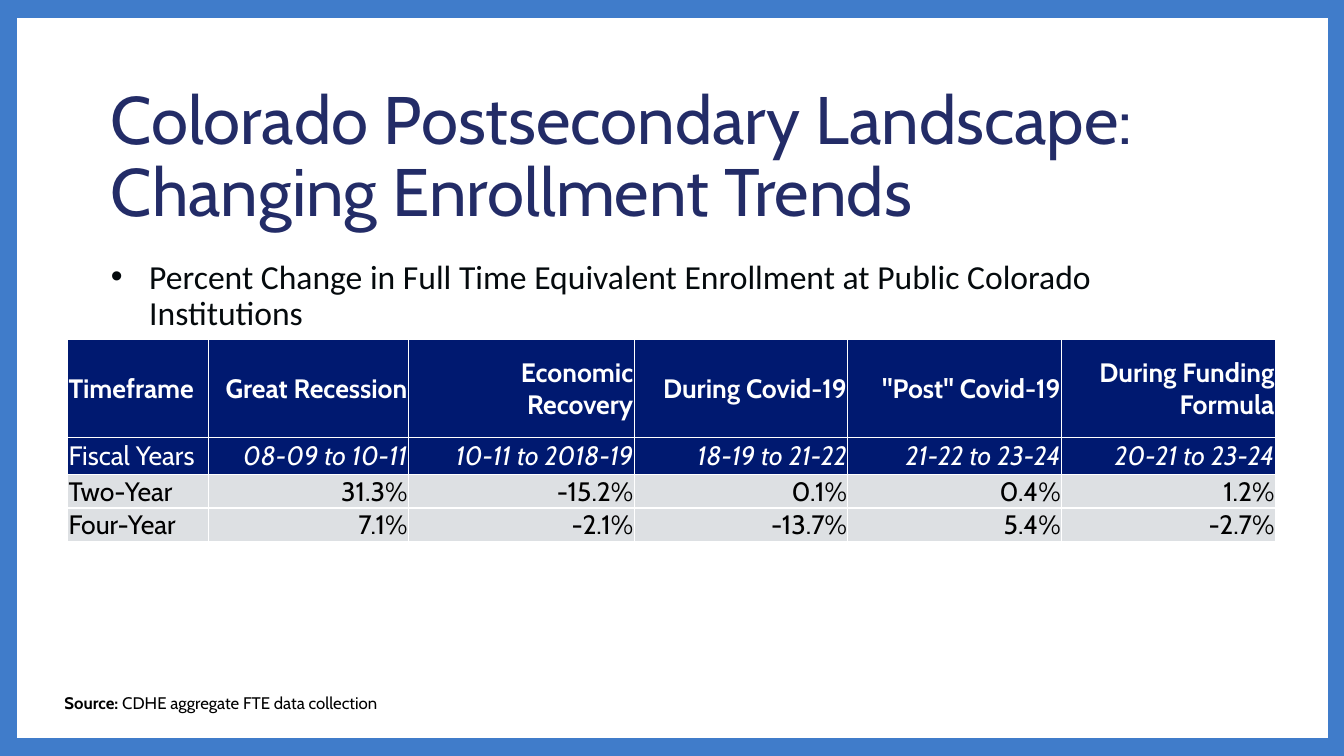
from lxml.etree import SubElement
from pptx import Presentation
from pptx.dml.color import RGBColor
from pptx.enum.shapes import MSO_SHAPE
from pptx.enum.text import MSO_ANCHOR, MSO_AUTO_SIZE, PP_ALIGN
from pptx.oxml.ns import qn
from pptx.util import Inches, Pt

# Content
TITLE = "Colorado Postsecondary Landscape: Changing Enrollment Trends"
BULLET = "Percent Change in Full Time Equivalent Enrollment at Public Colorado Institutions"
ENROLLMENT = [
    ("Timeframe", "Great Recession", "Economic Recovery", "During Covid-19",
     '"Post" Covid-19', "During Funding Formula"),
    ("Fiscal Years", "08-09 to 10-11", "10-11 to 2018-19", "18-19 to 21-22",
     "21-22 to 23-24", "20-21 to 23-24"),
    ("Two-Year", "31.3%", "-15.2%", "0.1%", "0.4%", "1.2%"),
    ("Four-Year", "7.1%", "-2.1%", "-13.7%", "5.4%", "-2.7%"),
]
SOURCE = [("Source: ", True), ("CDHE aggregate FTE data collection", False)]

# Layout, in inches
COLUMN_WIDTHS = [1.4, 1.98, 2.24, 2.12, 2.12, 2.12]
ROW_HEIGHTS = [0.97, 0.37, 0.33, 0.33]
HEADER_ROWS = 2

# Colours
BLUE = RGBColor(0x40, 0x7C, 0xCA)
WHITE = RGBColor(0xFF, 0xFF, 0xFF)
INDIGO = RGBColor(0x23, 0x2C, 0x67)
INK = RGBColor(0x05, 0x0A, 0x0D)
BLACK = RGBColor(0, 0, 0)
NAVY = RGBColor(0x00, 0x19, 0x70)
GREY = RGBColor(0xDD, 0xE0, 0xE3)


def add_run(paragraph, text, color, **formats):
    run = paragraph.add_run()
    run.text = text
    run.font.color.rgb = color
    for name, value in formats.items():
        setattr(run.font, name, value)


def place(shape, left, top, width, height):
    box = {"left": left, "top": top, "width": width, "height": height}
    for name, value in box.items():
        setattr(shape, name, Inches(value))


def fill_placeholder(shape, text, color, anchor, **formats):
    frame = shape.text_frame
    frame.auto_size = MSO_AUTO_SIZE.NONE
    frame.vertical_anchor = anchor
    paragraph = frame.paragraphs[0]
    paragraph.alignment = PP_ALIGN.LEFT
    paragraph.line_spacing = 0.9
    add_run(paragraph, text, color, **formats)
    return paragraph


def add_borders(cell, color):
    properties = cell._tc.get_or_add_tcPr()
    for side in ("a:lnL", "a:lnR", "a:lnT", "a:lnB"):
        line = SubElement(properties, qn(side), w=str(Pt(1)))
        fill = SubElement(line, qn("a:solidFill"))
        SubElement(fill, qn("a:srgbClr"), val=str(color))


presentation = Presentation()
presentation.slide_width = Inches(13.33)
presentation.slide_height = Inches(7.5)
slide = presentation.slides.add_slide(presentation.slide_layouts[1])

# Blue frame around a white panel, behind the placeholders
slide.background.fill.solid()
slide.background.fill.fore_color.rgb = BLUE
panel = slide.shapes.add_shape(MSO_SHAPE.ROUNDED_RECTANGLE, Inches(0.17), Inches(0.18),
                               Inches(13), Inches(7.14))
panel.adjustments[0] = 0
panel.shadow.inherit = False
panel.fill.solid()
panel.fill.fore_color.rgb = WHITE
panel.line.fill.background()
panel.element.getparent().insert(2, panel.element)

# Title and bullet
title, body = slide.placeholders
place(title, 1, 0.74, 11.34, 1.67)
fill_placeholder(title, TITLE, INDIGO, MSO_ANCHOR.MIDDLE, name="Cabin", size=Pt(48))
place(body, 1, 2.53, 11.34, 0.84)
bullet = fill_placeholder(body, BULLET, INK, MSO_ANCHOR.TOP, name="Calibri", size=Pt(24))
bullet.space_before = Pt(10)
bullet_properties = bullet._p.get_or_add_pPr()
bullet_properties.set("marL", str(Inches(0.38)))
bullet_properties.set("indent", str(Inches(-0.38)))
SubElement(bullet_properties, qn("a:buFont"), typeface="Arial")
SubElement(bullet_properties, qn("a:buChar"), char="•")

# Enrollment table
table = slide.shapes.add_table(
    len(ROW_HEIGHTS), len(COLUMN_WIDTHS), Inches(0.67), Inches(3.37),
    Inches(sum(COLUMN_WIDTHS)), Inches(sum(ROW_HEIGHTS))).table
for column, width in zip(table.columns, COLUMN_WIDTHS):
    column.width = Inches(width)
for row, height in zip(table.rows, ROW_HEIGHTS):
    row.height = Inches(height)

for row_index, texts in enumerate(ENROLLMENT):
    is_header = row_index < HEADER_ROWS
    for column_index, text in enumerate(texts):
        cell = table.cell(row_index, column_index)
        margin = Inches(0.01)
        cell_formats = {"margin_left": margin, "margin_right": margin, "margin_top": margin,
                        "margin_bottom": 0, "vertical_anchor": MSO_ANCHOR.MIDDLE}
        for name, value in cell_formats.items():
            setattr(cell, name, value)
        add_borders(cell, WHITE)
        cell.fill.solid()
        cell.fill.fore_color.rgb = NAVY if is_header else GREY
        paragraph = cell.text_frame.paragraphs[0]
        paragraph.alignment = PP_ALIGN.RIGHT if column_index else PP_ALIGN.LEFT
        add_run(paragraph, text, WHITE if is_header else BLACK, name="Cabin", size=Pt(19),
                bold=row_index == 0, italic=row_index == 1 and column_index > 0)

# Source line
source = slide.shapes.add_textbox(Inches(0.54), Inches(6.82), Inches(12.34), Inches(0.3))
source.text_frame.word_wrap = True
source.text_frame.auto_size = MSO_AUTO_SIZE.SHAPE_TO_FIT_TEXT
for text, bold in SOURCE:
    add_run(source.text_frame.paragraphs[0], text, BLACK, name="Cabin", size=Pt(12), bold=bold)

presentation.save("out.pptx")
